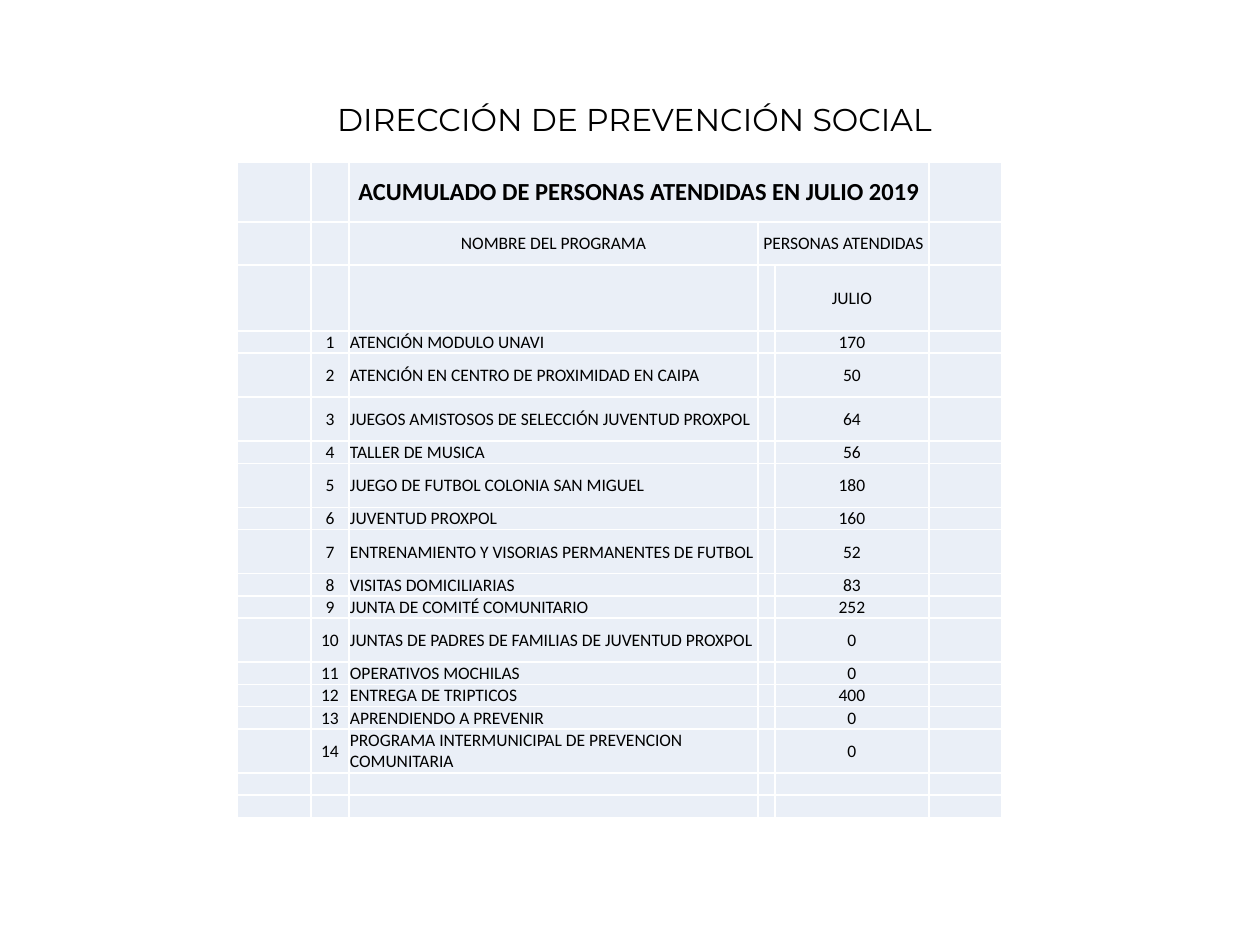
from lxml.etree import SubElement
from pptx import Presentation
from pptx.dml.color import RGBColor
from pptx.enum.text import MSO_ANCHOR, MSO_AUTO_SIZE, PP_ALIGN
from pptx.oxml.ns import qn
from pptx.util import Pt

PX = 914400 // 126
CENTER, LEFT = PP_ALIGN.CENTER, PP_ALIGN.LEFT
MIDDLE, FIXED = MSO_ANCHOR.MIDDLE, MSO_AUTO_SIZE.NONE
BLACK, WHITE, PALE_BLUE = "000000", "FFFFFF", "EAEFF7"

TITLE = "DIRECCIÓN DE PREVENCIÓN SOCIAL"
TITLE_BOX = (203, 94, 863, 50)
TABLE_CORNER = (237, 162)
COLUMNS = [74, 38, 409, 17, 154, 73]
SHORT, TALL = 22, 44
HEADERS = [
    (60, ["", "", "ACUMULADO DE PERSONAS ATENDIDAS EN JULIO 2019", "", "", ""]),
    (43, ["", "", "NOMBRE DEL PROGRAMA", "PERSONAS ATENDIDAS", "", ""]),
    (66, ["", "", "", "", "JULIO", ""]),
]
PROGRAMS = [
    ("ATENCIÓN MODULO UNAVI", 170, SHORT),
    ("ATENCIÓN EN CENTRO DE PROXIMIDAD EN CAIPA", 50, TALL),
    ("JUEGOS AMISTOSOS DE SELECCIÓN JUVENTUD PROXPOL", 64, TALL),
    ("TALLER DE MUSICA", 56, SHORT),
    ("JUEGO DE FUTBOL COLONIA SAN MIGUEL", 180, TALL),
    ("JUVENTUD PROXPOL", 160, SHORT),
    ("ENTRENAMIENTO Y VISORIAS PERMANENTES DE FUTBOL", 52, TALL),
    ("VISITAS DOMICILIARIAS", 83, SHORT),
    ("JUNTA DE COMITÉ COMUNITARIO", 252, SHORT),
    ("JUNTAS DE PADRES DE FAMILIAS DE JUVENTUD PROXPOL", 0, TALL),
    ("OPERATIVOS MOCHILAS", 0, SHORT),
    ("ENTREGA DE TRIPTICOS", 400, SHORT),
    ("APRENDIENDO A PREVENIR", 0, SHORT),
    ("PROGRAMA INTERMUNICIPAL DE PREVENCION COMUNITARIA", 0, TALL),
]
BLANK_ROWS = [(SHORT, [""] * len(COLUMNS))] * 2
MERGES = [((0, 2), (0, 4)), ((1, 3), (1, 4))]


def color(value):
    """Turn a hex string into a colour."""
    return RGBColor.from_string(value)


def write(para, text, font_name, size, align, bold=False):
    """Fill a paragraph and set its font."""
    para.alignment = align
    font = para.font
    font.name, font.size, font.bold = font_name, Pt(size), bold
    font.color.rgb = color(BLACK)
    if text:
        para.add_run().text = text
    else:
        SubElement(para._p, qn("a:endParaRPr"), sz=str(size * 100))


def outline(cell):
    """Give a cell a white line on all four sides."""
    properties = cell._tc.get_or_add_tcPr()
    for side in ("L", "R", "T", "B"):
        line = SubElement(properties, qn(f"a:ln{side}"), w=str(Pt(1)))
        fill = SubElement(line, qn("a:solidFill"))
        SubElement(fill, qn("a:srgbClr"), val=WHITE)


def add_title(page):
    """Place and format the slide title."""
    title = page.shapes.title
    title.left, title.top, title.width, title.height = (n * PX for n in TITLE_BOX)
    frame = title.text_frame
    frame.auto_size, frame.vertical_anchor, frame.word_wrap = FIXED, MIDDLE, True
    write(frame.paragraphs[0], TITLE, "Montserrat", 18, CENTER)


def add_program_table(page):
    """Build the table of people served by each program."""
    programs = [(height, ["", str(number), name, "", str(people), ""])
                for number, (name, people, height) in enumerate(PROGRAMS, 1)]
    rows = HEADERS + programs + BLANK_ROWS
    left, top = TABLE_CORNER
    height = sum(row_height for row_height, _ in rows)
    table = page.shapes.add_table(len(rows), len(COLUMNS), left * PX, top * PX,
                                  sum(COLUMNS) * PX, height * PX).table
    table.first_row = table.horz_banding = False
    for column, width in zip(table.columns, COLUMNS):
        column.width = width * PX
    for r, (row_height, texts) in enumerate(rows):
        table.rows[r].height = row_height * PX
        for c, text in enumerate(texts):
            cell = table.cell(r, c)
            outline(cell)
            cell.fill.solid()
            cell.fill.fore_color.rgb = color(PALE_BLUE)
            cell.vertical_anchor = MIDDLE
            cell.margin_left = cell.margin_right = cell.margin_top = PX
            cell.margin_bottom = 0
            align = LEFT if c == 2 and r >= len(HEADERS) else CENTER
            heading = r == 0 and text != ""
            write(cell.text_frame.paragraphs[0], text, "Calibri",
                  14 if heading else 10, align, heading)
    for first, last in MERGES:
        table.cell(*first).merge(table.cell(*last))


def main():
    """Build and save the slide."""
    deck = Presentation()
    deck.slide_width, deck.slide_height = 1260 * PX, 945 * PX
    page = deck.slides.add_slide(deck.slide_layouts[5])
    add_title(page)
    add_program_table(page)
    deck.save("out.pptx")


if __name__ == "__main__":
    main()
